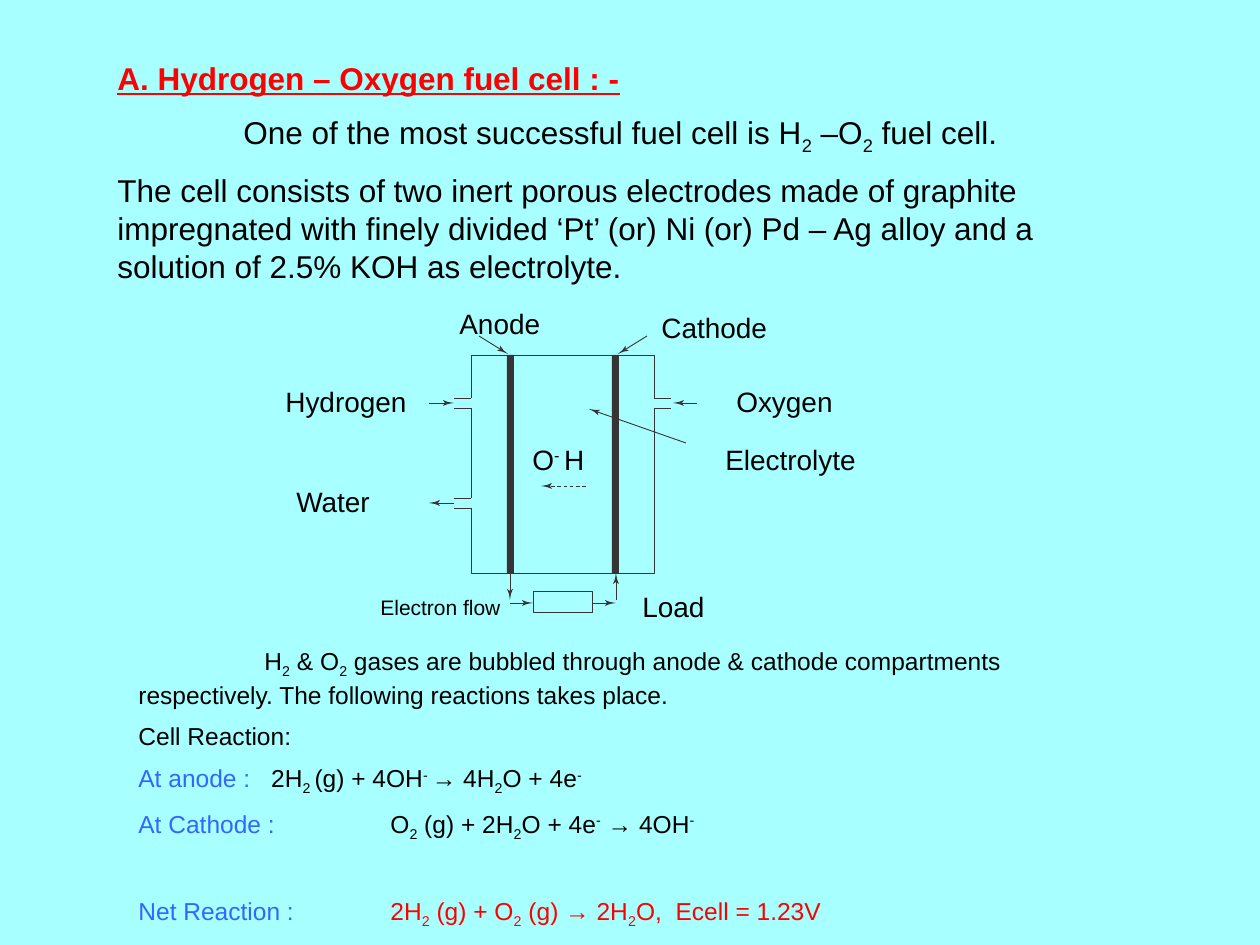
"""Build the hydrogen-oxygen fuel cell slide."""
from math import hypot
from pptx import Presentation
from pptx.dml.color import RGBColor
from pptx.enum.dml import MSO_LINE
from pptx.enum.shapes import MSO_CONNECTOR, MSO_SHAPE
from pptx.oxml.ns import qn
from pptx.util import Emu, Pt
from lxml.etree import SubElement

INK, BLACK, RED, BLUE = "363435", "000000", "FF0000", "3366FF"
BASELINES = {"_": -25000, "^": 30000}
HEAD = [(0, 0), (6, 1), (11, 3), (9, 0), (11, -3), (6, -1)]
HEAD_NOTCH = 8


def px(length):
    return Emu(round(length * 914400 / 126))


def color(value):
    return RGBColor.from_string(value)


def add_span(para, text, size=14, tint=BLACK, bold=False, underline=False, baseline=0):
    span = para.add_run()
    span.text = text
    span.font.name = "Arial"
    span.font.size = Pt(size)
    span.font.bold = bold
    span.font.underline = underline
    span.font.color.rgb = color(tint)
    if baseline:
        span.font._element.set("baseline", str(baseline))


def formula(text, **style):
    """Split text where _ lowers and ^ raises the next character or braced group."""
    spans, plain, symbols = [], "", iter(text)
    for symbol in symbols:
        if symbol in BASELINES:
            group = next(symbols)
            if group == "{":
                group = "".join(iter(lambda: next(symbols), "}"))
            spans.append((plain, style))
            spans.append((group, dict(style, baseline=BASELINES[symbol])))
            plain = ""
        else:
            plain += symbol
    spans.append((plain, style))
    return [(part, look) for part, look in spans if part]


class Sketch:
    """Holds the line style and the current slide."""

    def __init__(self, page, ink=INK, weight=0.5):
        self.page = page
        self.ink = ink
        self.weight = weight

    def background(self, value):
        fill = self.page.background.fill
        fill.solid()
        fill.fore_color.rgb = color(value)

    def stroke(self, item):
        item.line.color.rgb = color(self.ink)
        item.line.width = Pt(self.weight)

    def paint(self, shape, fill):
        shape.shadow.inherit = False
        if fill:
            shape.fill.solid()
            shape.fill.fore_color.rgb = color(fill)
        else:
            shape.fill.background()

    def text(self, left, top, width, height, paragraphs, wrap=True):
        box = self.page.shapes.add_textbox(px(left), px(top), px(width), px(height))
        frame = box.text_frame
        frame.word_wrap = wrap
        for index, (before, spans) in enumerate(paragraphs):
            para = frame.add_paragraph() if index else frame.paragraphs[0]
            para.space_before = Pt(before)
            if any("\t" in words for words, _ in spans):
                tabs = SubElement(para._p.get_or_add_pPr(), qn("a:tabLst"))
                for stop in (126, 252):
                    SubElement(tabs, qn("a:tab"), pos=str(px(stop)), algn="l")
            for words, style in spans:
                add_span(para, words, **style)

    def label(self, left, top, width, words, size=16):
        self.text(left, top, width, 46, [(0, formula(words, size=size))], wrap=False)

    def rectangle(self, left, top, width, height, fill=None):
        box = self.page.shapes.add_shape(
            MSO_SHAPE.RECTANGLE, px(left), px(top), px(width), px(height))
        self.paint(box, fill)
        self.stroke(box)

    def outline(self, points, fill=None):
        start, *rest = [(px(x), px(y)) for x, y in points]
        builder = self.page.shapes.build_freeform(*start)
        builder.add_line_segments(rest, close=bool(fill))
        shape = builder.convert_to_shape()
        self.paint(shape, fill)
        if fill:
            shape.line.fill.background()
        else:
            self.stroke(shape)

    def line(self, x1, y1, x2, y2, dashed=False):
        link = self.page.shapes.add_connector(
            MSO_CONNECTOR.STRAIGHT, px(x1), px(y1), px(x2), px(y2))
        self.stroke(link)
        if dashed:
            link.line.dash_style = MSO_LINE.DASH
        SubElement(link._element.spPr, qn("a:effectLst"))

    def arrow(self, x1, y1, x2, y2, dashed=False):
        length = hypot(x2 - x1, y2 - y1)
        dx, dy = (x1 - x2) / length, (y1 - y2) / length
        self.line(x1, y1, x2 + HEAD_NOTCH * dx, y2 + HEAD_NOTCH * dy, dashed)
        self.outline([(x2 + back * dx - side * dy, y2 + back * dy + side * dx)
                      for back, side in HEAD], self.ink)


def draw_cell(sketch):
    left, right, top, bottom = 471, 654, 355, 573
    inlet, outlet = (398, 408), (498, 508)
    sketch.outline([(left, inlet[0]), (left, top), (right, top), (right, inlet[0])])
    sketch.line(left, inlet[1], left, outlet[0])
    sketch.outline([(right, inlet[1]), (right, bottom), (left, bottom), (left, outlet[1])])
    for y in inlet + outlet:
        sketch.line(left - 17, y, left, y)
    for y in inlet:
        sketch.line(right, y, right + 17, y)
    for x in (507, 612):
        sketch.rectangle(x, top, 7, bottom - top, INK)
    sketch.rectangle(533, 591, 59, 22)
    for ends in [
        (429, 403, 454, 403), (697, 403, 673, 403), (454, 503, 429, 503),
        (510, 573, 510, 600), (510, 603, 533, 603), (592, 603, 616, 603),
        (616, 600, 616, 573), (479, 336, 508, 354), (647, 336, 618, 354),
        (686, 443, 589, 409),
    ]:
        sketch.arrow(*ends)
    sketch.arrow(586, 486, 541, 486, dashed=True)
    for left, top, width, words in [
        (447, 300, 107, "Anode"), (649, 304, 132, "Cathode"),
        (273, 378, 147, "Hydrogen"), (284, 478, 100, "Water"),
        (724, 378, 123, "Oxygen"), (713, 436, 158, "Electrolyte"),
        (630, 583, 88, "Load"), (520, 436, 79, "O^{- }H"),
    ]:
        sketch.label(left, top, width, words)
    sketch.label(368, 588, 146, "Electron flow", size=12)


def main():
    deck = Presentation()
    deck.slide_width, deck.slide_height = px(1260), px(945)
    sketch = Sketch(deck.slides.add_slide(deck.slide_layouts[6]))
    sketch.background("A7FFFF")
    sketch.text(105, 53, 1018, 239, [
        (0, formula("A. Hydrogen – Oxygen fuel cell : -",
                    size=18, tint=RED, bold=True, underline=True)),
        (9, formula("\tOne of the most successful fuel cell is H_2 –O_2 fuel cell.", size=18)),
        (9, formula(
            "The cell consists of two inert porous electrodes made of graphite impregnated "
            "with finely divided ‘Pt’ (or) Ni (or) Pd – Ag alloy and a solution of 2.5% KOH "
            "as electrolyte.", size=18)),
    ])
    draw_cell(sketch)
    sketch.text(126, 640, 924, 280, [
        (0, formula("\tH_2 & O_2 gases are bubbled through anode & cathode compartments "
                    "respectively. The following reactions takes place.")),
        (7, formula("Cell Reaction:")),
        (7, formula("At anode :", tint=BLUE)
         + formula("\t 2H_{2 }(g) + 4OH^{- }→ 4H_2O + 4e^-")),
        (7, formula("At Cathode :", tint=BLUE)
         + formula("\tO_2 (g) + 2H_2O + 4e^- → 4OH^-")),
        (31, formula("Net Reaction : \t", tint=BLUE)
         + formula("2H_2 (g) + O_2 (g) → 2H_2O,  Ecell = 1.23V", tint=RED)),
    ])
    deck.save("out.pptx")


if __name__ == "__main__":
    main()
